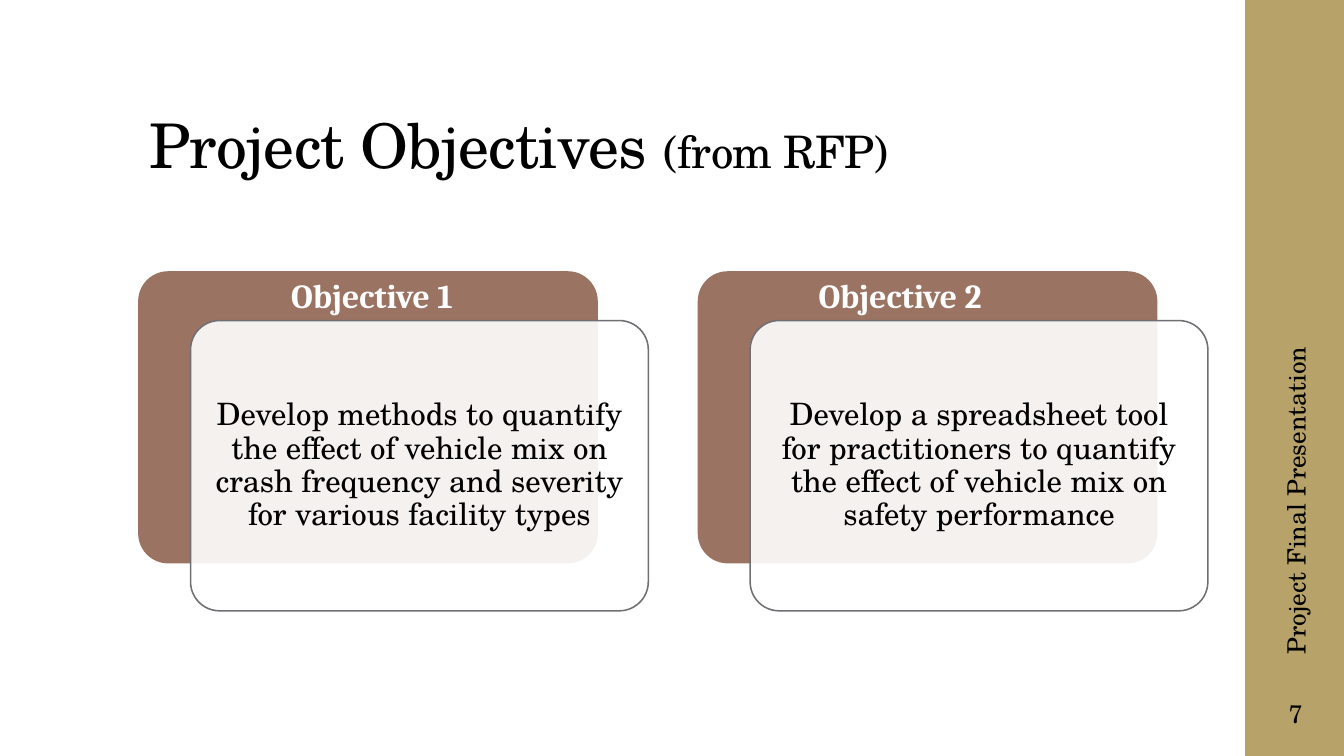
from lxml import etree
from pptx import Presentation
from pptx.dml.color import RGBColor
from pptx.enum.shapes import MSO_SHAPE
from pptx.enum.text import MSO_ANCHOR, MSO_AUTO_SIZE, PP_ALIGN
from pptx.oxml.ns import qn
from pptx.util import Inches, Pt

RECT, ROUND = MSO_SHAPE.RECTANGLE, MSO_SHAPE.ROUNDED_RECTANGLE
LEFT, CENTER = PP_ALIGN.LEFT, PP_ALIGN.CENTER
TOP, MIDDLE, BOTTOM = MSO_ANCHOR.TOP, MSO_ANCHOR.MIDDLE, MSO_ANCHOR.BOTTOM

# Content
TITLE = [("Project Objectives ", 44), ("(from RFP)", 32)]
GOALS = [
    ("Objective 1", 2.79,
     "Develop methods to quantify the effect of vehicle mix on "
     "crash frequency and severity for various facility types"),
    ("Objective 2", 8.02,
     "Develop a spreadsheet tool for practitioners to quantify "
     "the effect of vehicle mix on safety performance"),
]
SIDE = "Project Final Presentation"
PAGE = "7"

# Style
SERIF, HEAD = "TeX Gyre Schola", "Cambria"
BLACK, WHITE, GOLD, BROWN, GRAY = "000000", "FFFFFF", "B7A369", "9B7362", "6F6F74"

# Card grid
CARD_X, CARD_Y, CARD_W, CARD_H = 1.38, 2.7, 4.54, 2.88
STEP, SHIFT_X, SHIFT_Y, PAD = 5.55, 0.51, 0.48, 0.08


def rgb(code):
    return RGBColor.from_string(code)


def add_run(para, text, size, font=SERIF, color=BLACK, bold=False):
    run = para.add_run()
    run.text = text
    run.font.size = Pt(size)
    run.font.name = font
    run.font.bold = bold
    run.font.color.rgb = rgb(color)
    return run


def add_box(slide, kind, at, fill, line=None, width=1, alpha=None):
    box = slide.shapes.add_shape(kind, *map(Inches, at))
    box.shadow.inherit = False
    box.fill.solid()
    box.fill.fore_color.rgb = rgb(fill)
    if kind == ROUND:
        box.adjustments[0] = 0.1
    if alpha:
        tint = box.fill._xPr.find(qn("a:solidFill"))[0]
        etree.SubElement(tint, qn("a:alpha")).set("val", str(alpha * 1000))
    if line:
        box.line.color.rgb = rgb(line)
        box.line.width = Pt(width)
    else:
        box.line.fill.background()
    return box


def add_text(slide, at, text, size, align=LEFT, anchor=MIDDLE,
             inset=(0.1, 0.05), **style):
    box = slide.shapes.add_textbox(*map(Inches, at))
    frame = box.text_frame
    frame.word_wrap = True
    frame.vertical_anchor = anchor
    frame.margin_left = frame.margin_right = Inches(inset[0])
    frame.margin_top = frame.margin_bottom = Inches(inset[1])
    para = frame.paragraphs[0]
    para.alignment = align
    add_run(para, text, size, **style)
    return box


def main():
    deck = Presentation()
    deck.slide_width, deck.slide_height = Inches(13.33), Inches(7.5)
    slide = deck.slides.add_slide(deck.slide_layouts[5])

    # Side bar
    add_box(slide, RECT, (12.35, 0, 1, 7.5), GOLD)

    # Title
    title = slide.shapes.title
    title.left, title.top = Inches(1.38), Inches(0.4)
    title.width, title.height = Inches(10.6), Inches(1.45)
    frame = title.text_frame
    frame.word_wrap = True
    frame.auto_size = MSO_AUTO_SIZE.NONE
    frame.vertical_anchor = BOTTOM
    para = frame.paragraphs[0]
    para.alignment = LEFT
    para.line_spacing = 0.9
    for text, size in TITLE:
        run = add_run(para, text, size)
        run._r.get_or_add_rPr().set("spc", "-50")

    # Objective cards
    for i, (head, head_x, body) in enumerate(GOALS):
        x = CARD_X + i * STEP
        add_box(slide, ROUND, (x, CARD_Y, CARD_W, CARD_H), BROWN, BROWN, 1.35)
        x, y = x + SHIFT_X, CARD_Y + SHIFT_Y
        add_box(slide, ROUND, (x, y, CARD_W, CARD_H), WHITE, GRAY, 1.1, alpha=90)
        inner = (x + PAD, y + PAD, CARD_W - 2 * PAD, CARD_H - 2 * PAD)
        note = add_text(slide, inner, body, 22, CENTER, inset=(0.09, 0.09))
        note.text_frame.paragraphs[0].line_spacing = 0.9
        add_text(slide, (head_x, 2.68, 2.17, 0.5), head, 24, anchor=TOP,
                 font=HEAD, color=WHITE, bold=True)

    # Side label and page number
    label = add_text(slide, (10.89, 4.43, 3.92, 0.4), SIDE, 18)
    label.rotation = 270
    add_text(slide, (12.35, 6.75, 1, 0.65), PAGE, 18, CENTER, inset=(0.05, 0.05))

    deck.save("out.pptx")


if __name__ == "__main__":
    main()
